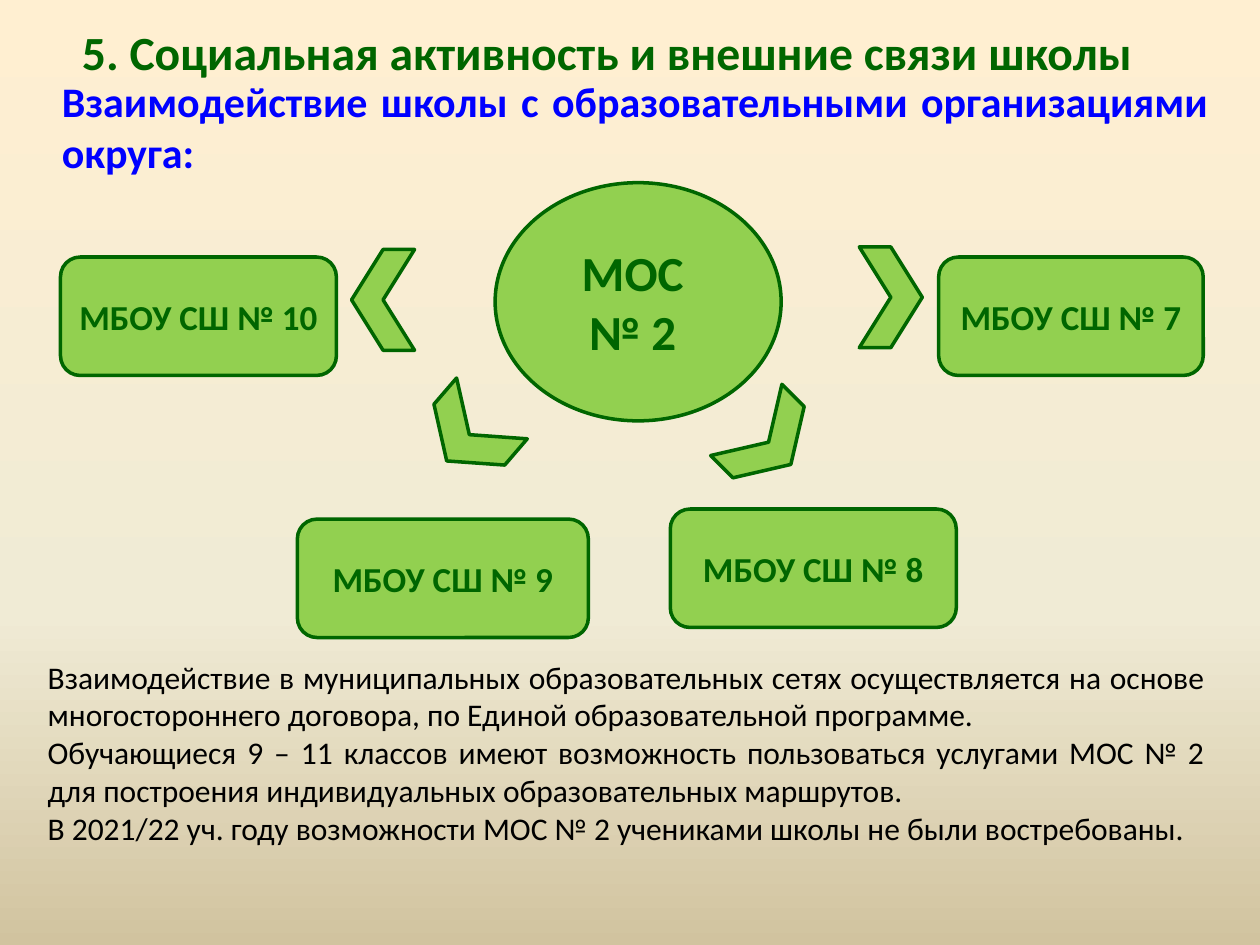
from copy import deepcopy
from dataclasses import dataclass

from pptx import Presentation
from pptx.dml.color import RGBColor
from pptx.enum.shapes import MSO_SHAPE
from pptx.enum.text import MSO_ANCHOR, MSO_AUTO_SIZE, PP_ALIGN
from pptx.oxml.ns import qn
from pptx.util import Inches, Pt


@dataclass(frozen=True)
class Theme:
    font: str = "Calibri"
    green: str = "006600"
    lime: str = "92D050"
    blue: str = "0000FF"
    black: str = "000000"
    back: tuple = ((0, "FFEFD1"), (0.65, "F0EBD5"), (1, "D1C39F"))
    title: float = 27.2
    lead: float = 24
    hub: float = 28
    node: float = 20
    note: float = 18
    line: float = 2


class Deck:
    def __init__(self, theme):
        self.theme = theme
        self.file = Presentation()
        self.file.slide_width = Inches(10)
        self.file.slide_height = Inches(7.5)
        self.slide = self.file.slides.add_slide(self.file.slide_layouts[1])

    def backdrop(self):
        fill = self.slide.background.fill
        fill.gradient()
        fill.gradient_angle = 270
        stops = self.slide.element.find(".//" + qn("a:gsLst"))
        stops.append(deepcopy(stops[-1]))
        for stop, (place, color) in zip(fill.gradient_stops, self.theme.back):
            stop.position = place
            stop.color.rgb = RGBColor.from_string(color)

    def label(self, frame, lines, size, color, bold, align):
        for index, line in enumerate(lines):
            para = frame.add_paragraph() if index else frame.paragraphs[0]
            para.text = line
            para.alignment = align
            font = para.font
            font.name = self.theme.font
            font.size = Pt(size)
            font.bold = bold
            font.color.rgb = RGBColor.from_string(color)

    def holder(self, index, box, text, size, color, align):
        item = self.slide.placeholders[index]
        item.left, item.top, item.width, item.height = map(Inches, box)
        frame = item.text_frame
        frame.auto_size = MSO_AUTO_SIZE.NONE
        self.label(frame, [text], size, color, True, align)
        return frame.paragraphs[0]

    def title(self, box, text):
        para = self.holder(0, box, text, self.theme.title, self.theme.green, PP_ALIGN.LEFT)
        para.line_spacing = 0.9

    def lead(self, box, text):
        para = self.holder(1, box, text, self.theme.lead, self.theme.blue, PP_ALIGN.JUSTIFY)
        props = para._p.get_or_add_pPr()
        props.set("marL", "0")
        props.set("indent", "0")
        props.insert_element_before(
            props.makeelement(qn("a:buNone"), {}), "a:tabLst", "a:defRPr", "a:extLst"
        )

    def shape(self, kind, box):
        item = self.slide.shapes.add_shape(kind, *map(Inches, box))
        item.shadow.inherit = False
        item.fill.solid()
        item.fill.fore_color.rgb = RGBColor.from_string(self.theme.lime)
        item.line.color.rgb = RGBColor.from_string(self.theme.green)
        item.line.width = Pt(self.theme.line)
        return item

    def node(self, kind, box, lines, size):
        frame = self.shape(kind, box).text_frame
        frame.word_wrap = False
        frame.vertical_anchor = MSO_ANCHOR.MIDDLE
        self.label(frame, lines, size, self.theme.green, True, PP_ALIGN.CENTER)

    def arrow(self, box, turn):
        self.shape(MSO_SHAPE.CHEVRON, box).rotation = turn

    def note(self, box, lines):
        frame = self.slide.shapes.add_textbox(*map(Inches, box)).text_frame
        frame.word_wrap = True
        self.label(frame, lines, self.theme.note, self.theme.black, False, PP_ALIGN.JUSTIFY)

    def save(self):
        self.file.save("out.pptx")


def main():
    theme = Theme()
    deck = Deck(theme)
    deck.backdrop()
    deck.lead(
        (0.39, 0.55, 9.3, 6.15),
        "Взаимодействие школы с образовательными организациями округа:",
    )
    deck.title((0.55, 0.16, 9, 0.56), "5. Социальная активность и внешние связи школы")

    deck.node(MSO_SHAPE.OVAL, (3.93, 1.45, 2.27, 1.89), ["МОС ", "№ 2 "], theme.hub)

    arrows = [
        (6.82, 1.96, 0.5, 0.8, 0),
        (2.79, 1.98, 0.5, 0.8, 180),
        (5.85, 3.11, 0.5, 0.8, 45),
        (3.45, 3.08, 0.55, 0.74, 130.7),
    ]
    for *box, turn in arrows:
        deck.arrow(box, turn)

    schools = [
        (10, 0.48, 2.04, 2.19),
        (9, 2.36, 4.12, 2.31),
        (8, 5.32, 4.04, 2.27),
        (7, 7.45, 2.04, 2.1),
    ]
    for number, left, top, width in schools:
        box = (left, top, width, 0.94)
        deck.node(MSO_SHAPE.ROUNDED_RECTANGLE, box, [f"МБОУ СШ № {number}"], theme.node)

    deck.note(
        (0.28, 5.17, 9.38, 1.89),
        [
            "Взаимодействие в муниципальных образовательных сетях осуществляется "
            "на основе многостороннего договора, по Единой образовательной программе.",
            "Обучающиеся 9 – 11 классов имеют возможность пользоваться услугами "
            "МОС № 2 для построения индивидуальных образовательных маршрутов.",
            "В 2021/22 уч. году возможности МОС № 2 учениками школы не были востребованы.",
        ],
    )
    deck.save()


if __name__ == "__main__":
    main()
